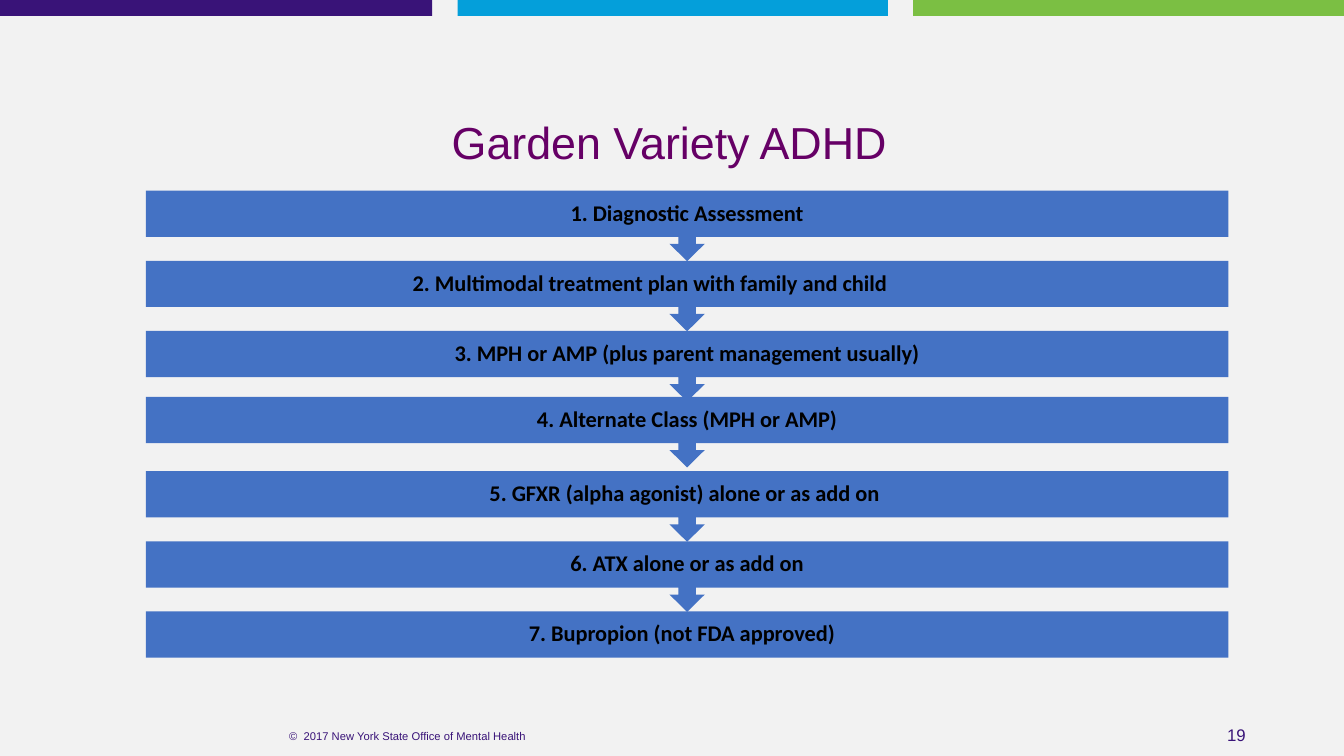
from pptx import Presentation
from pptx.dml.color import RGBColor
from pptx.enum import shapes, text
from pptx.util import Pt

PURPLE = RGBColor(0x39, 0x13, 0x78)
CYAN = RGBColor(0x04, 0x9F, 0xDA)
GREEN = RGBColor(0x7B, 0xBF, 0x43)
PLUM = RGBColor(0x66, 0x00, 0x66)
BLUE = RGBColor(0x44, 0x72, 0xC4)
BLACK = RGBColor(0, 0, 0)
PALE = RGBColor(0xF2, 0xF2, 0xF2)


def paint(shape, color):
    shape.shadow.inherit = False
    shape.fill.solid()
    shape.fill.fore_color.rgb = color
    shape.line.fill.background()


def write(shape, words, size, color, font, align, inset=3.6):
    frame = shape.text_frame
    frame.word_wrap = True
    frame.vertical_anchor = text.MSO_ANCHOR.MIDDLE
    frame.margin_left = frame.margin_right = Pt(inset)
    frame.margin_top = frame.margin_bottom = Pt(inset)
    paragraph = frame.paragraphs[0]
    paragraph.text = words
    paragraph.alignment = align
    paragraph.font.size = Pt(size)
    paragraph.font.name = font
    paragraph.font.color.rgb = color
    return paragraph


deck = Presentation()
deck.slide_width, deck.slide_height = Pt(960), Pt(540)
slide = deck.slides.add_slide(deck.slide_layouts[6])
slide.background.fill.solid()
slide.background.fill.fore_color.rgb = PALE

for left, width, color in [(0, 308.7, PURPLE), (326.9, 307.3, CYAN), (652.3, 307.7, GREEN)]:
    band = slide.shapes.add_shape(
        shapes.MSO_SHAPE.RECTANGLE, Pt(left), Pt(0), Pt(width), Pt(11.4))
    paint(band, color)

copyright_line = slide.shapes.add_textbox(Pt(133.9), Pt(517), Pt(314.6), Pt(17.3))
write(copyright_line, "©  2017 New York State Office of Mental Health", 8, PURPLE,
      "Arial", text.PP_ALIGN.CENTER)
page_number = slide.shapes.add_textbox(Pt(863.4), Pt(515.5), Pt(30), Pt(19.4))
write(page_number, "19", 12, PURPLE, "Arial", text.PP_ALIGN.RIGHT)
title = slide.shapes.add_textbox(Pt(248.4), Pt(40.3), Pt(459.4), Pt(126.7))
write(title, "Garden Variety ADHD", 32, PLUM, "Arial", text.PP_ALIGN.CENTER).line_spacing = 0.9

LEFT, RIGHT, TOP, PITCH = 104.2, 877.4, 136.2, 50.1
CENTER = (LEFT + RIGHT) / 2
BAR, STEM, TIP = 33, 38, 50.4
STEM_HALF, HEAD_HALF = 6.3, 12.6

steps = [
    ("1. Diagnostic Assessment", 0, 0),
    ("2. Multimodal treatment plan with family and child", 0, 53),
    ("3. MPH or AMP (plus parent management usually)", 0, 0),
    ("4. Alternate Class (MPH or AMP)", -3, 0),
    ("5. GFXR (alpha agonist) alone or as add on", 0, 3.6),
    ("6. ATX alone or as add on", 0, 0),
    ("7. Bupropion (not FDA approved)", 0, 7.3),
]
for index, (words, nudge, right_indent) in enumerate(steps):
    top = TOP + index * PITCH + nudge
    last = index == len(steps) - 1
    if last:
        bar = slide.shapes.add_shape(
            shapes.MSO_SHAPE.RECTANGLE, Pt(LEFT), Pt(top), Pt(RIGHT - LEFT), Pt(BAR))
    else:
        outline = [
            (RIGHT, 0), (RIGHT, BAR),
            (CENTER + STEM_HALF, BAR), (CENTER + STEM_HALF, STEM),
            (CENTER + HEAD_HALF, STEM), (CENTER, TIP), (CENTER - HEAD_HALF, STEM),
            (CENTER - STEM_HALF, STEM), (CENTER - STEM_HALF, BAR),
            (LEFT, BAR),
        ]
        builder = slide.shapes.build_freeform(Pt(LEFT), Pt(top))
        builder.add_line_segments([(Pt(x), Pt(top + y)) for x, y in outline])
        bar = builder.convert_to_shape()
    paint(bar, BLUE)
    label = write(bar, words, 16, BLACK, "Calibri", text.PP_ALIGN.CENTER, 0)
    label.font.bold = True
    label.line_spacing = 0.9
    bar.text_frame.margin_right = Pt(right_indent)
    bar.text_frame.margin_bottom = Pt(0 if last else TIP - BAR)

deck.save("out.pptx")
